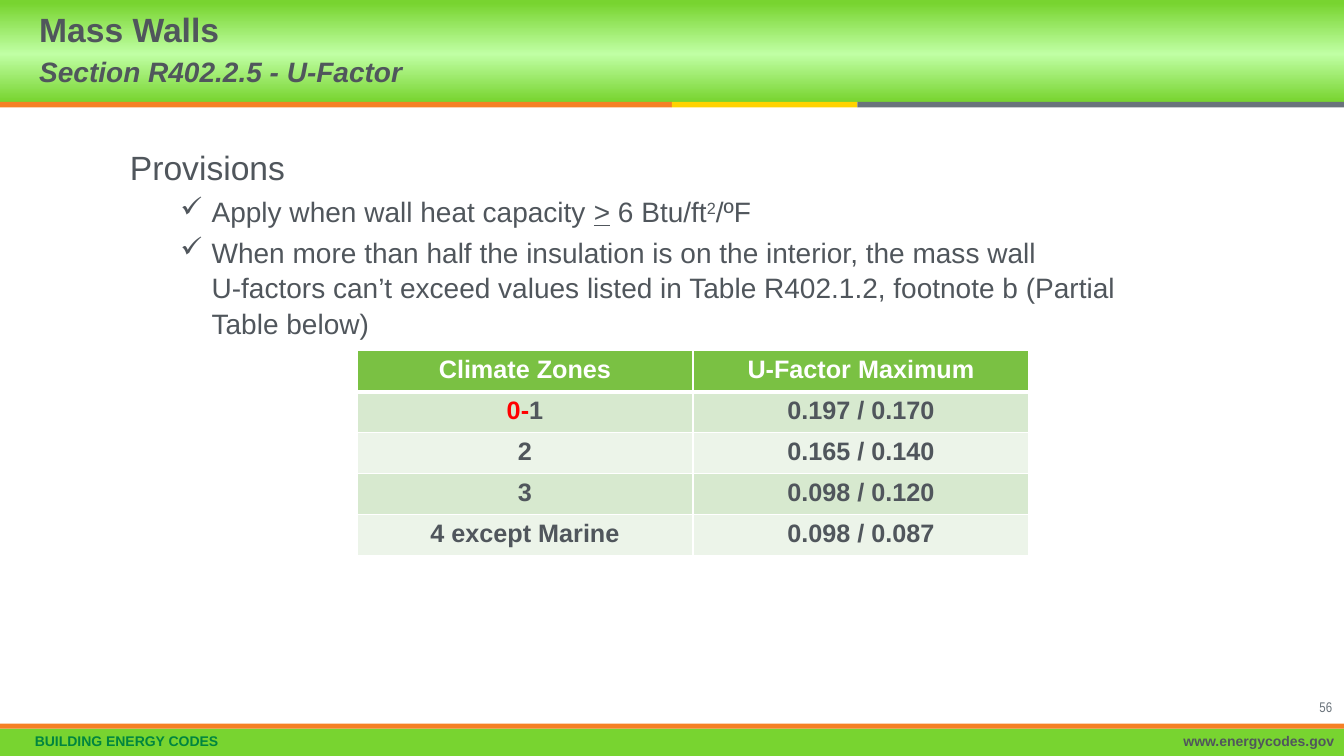
from lxml.etree import SubElement
from copy import deepcopy
from pptx import Presentation
from pptx.dml.color import RGBColor
from pptx.enum.shapes import MSO_SHAPE
from pptx.enum.text import MSO_ANCHOR, PP_ALIGN
from pptx.oxml.ns import qn
from pptx.util import Inches, Pt

WIDTH, HEIGHT = Inches(13.33), Inches(7.5)
GREEN = RGBColor(0x78, 0xD4, 0x30)
PALE_GREEN = RGBColor(0xC0, 0xFF, 0xA4)
DARK_GREEN = RGBColor(0x00, 0x85, 0x3F)
ORANGE = RGBColor(0xF5, 0x80, 0x25)
YELLOW = RGBColor(0xFF, 0xD2, 0x00)
GRAY = RGBColor(0x6A, 0x73, 0x7B)
TEXT = RGBColor(0x50, 0x56, 0x5C)
RED = RGBColor(0xFF, 0x00, 0x00)
WHITE = RGBColor(0xFF, 0xFF, 0xFF)
HEADER_FILL = RGBColor(0x7A, 0xC1, 0x43)
BAND_FILLS = [RGBColor(0xEC, 0xF4, 0xE9), RGBColor(0xD7, 0xE9, 0xCF)]

# Left, width and colour of the stripe under the title, in percent of the slide
STRIPE = [(0, 50, ORANGE), (50, 13.8, YELLOW), (63.8, 36.2, GRAY)]
ROWS = [
    ("Climate Zones", "U-Factor Maximum"),
    ("0-1", "0.197 / 0.170"),
    ("2", "0.165 / 0.140"),
    ("3", "0.098 / 0.120"),
    ("4 except Marine", "0.098 / 0.087"),
]


def place(left, top, width, height):
    """Turn percentages of the slide's size into lengths."""
    return [int(share * size / 100) for share, size in
            zip((left, top, width, height), (WIDTH, HEIGHT, WIDTH, HEIGHT))]


def add_bar(page, area, color):
    bar = page.shapes.add_shape(MSO_SHAPE.RECTANGLE, *place(*area))
    bar.shadow.inherit = False
    bar.line.fill.background()
    bar.fill.solid()
    bar.fill.fore_color.rgb = color
    return bar


def add_title_band(page):
    fill = add_bar(page, (0, 0, 100, 13.47), GREEN).fill
    fill.gradient()
    fill.gradient_angle = 90
    first_stop = fill.gradient_stops[0]._gs
    first_stop.addnext(deepcopy(first_stop))
    for stop, position, color in zip(fill.gradient_stops, (0, 0.47, 0.97),
                                     (GREEN, PALE_GREEN, GREEN)):
        stop.position = position
        stop.color.rgb = color


def add_text_frame(page, area):
    frame = page.shapes.add_textbox(*place(*area)).text_frame
    frame.word_wrap = True
    return frame


def style(font, size, color=TEXT, bold=False, name="Arial"):
    font.name, font.size, font.bold = name, Pt(size), bold
    font.color.rgb = color


def add_label(page, area, text, align=PP_ALIGN.LEFT, **look):
    frame = add_text_frame(page, area)
    para = frame.paragraphs[0]
    para.text, para.alignment = text, align
    para.line_spacing = 0.9
    style(para.font, 10, **look)


def add_title(page):
    frame = add_text_frame(page, (2.18, 0, 53.34, 13.07))
    frame.vertical_anchor = MSO_ANCHOR.MIDDLE
    para = frame.paragraphs[0]
    para.line_spacing = Pt(28)
    heading = para.add_run()
    heading.text = "Mass Walls"
    style(heading.font, 24, bold=True)
    para.add_line_break()
    section = para.add_run()
    section.text = "Section R402.2.5 - U-Factor"
    style(section.font, 20, bold=True)
    section.font.italic = True


def add_check_item(frame, *texts):
    """Add a check-marked paragraph and return its runs."""
    para = frame.add_paragraph()
    para.space_before = Pt(4)
    para.line_spacing = 1.05
    properties = para._p.get_or_add_pPr()
    properties.set("marL", str(Inches(0.81)))
    properties.set("indent", str(-Inches(0.31)))
    SubElement(properties, qn("a:buChar")).set("char", "✓")
    style(para.font, 20)
    spans = []
    for text in texts:
        span = para.add_run()
        span.text = text
        style(span.font, 20)
        spans.append(span)
    return spans


def add_provisions(page):
    frame = add_text_frame(page, (8.93, 18.53, 77.42, 24.67))
    para = frame.paragraphs[0]
    para.text = "Provisions"
    para.line_spacing = 1.05
    style(para.font, 24)
    spans = add_check_item(frame, "Apply when wall heat capacity ", ">",
                           " 6 Btu/ft", "2", "/ºF")
    spans[1].font.underline = True
    spans[3]._r.get_or_add_rPr().set("baseline", "30000")
    lines = add_check_item(
        frame, "When more than half the insulation is on the interior, the mass wall ",
        "U-factors can’t exceed values listed in Table R402.1.2, "
        "footnote b (Partial Table below)")
    lines[0]._r.addnext(lines[0]._r.makeelement(qn("a:br")))


def set_borders(cell, bottom_width):
    properties = cell._tc.get_or_add_tcPr()
    widths = {"a:lnL": 1, "a:lnR": 1, "a:lnT": 1, "a:lnB": bottom_width}
    for index, (tag, width) in enumerate(widths.items()):
        line = properties.makeelement(qn(tag), {"w": str(Pt(width))})
        fill = SubElement(line, qn("a:solidFill"))
        SubElement(fill, qn("a:srgbClr")).set("val", str(WHITE))
        properties.insert(index, line)


def add_factor_table(page):
    table = page.shapes.add_table(len(ROWS), 2, *place(26.56, 46.4, 50, 27.1)).table
    table.horz_banding = False
    for row, texts in enumerate(ROWS):
        for column, text in enumerate(texts):
            cell = table.cell(row, column)
            cell.fill.solid()
            cell.fill.fore_color.rgb = BAND_FILLS[row % 2] if row else HEADER_FILL
            set_borders(cell, 1 if row else 3)
            para = cell.text_frame.paragraphs[0]
            para.alignment = PP_ALIGN.CENTER
            color = TEXT if row else WHITE
            if text == "0-1":
                parts = [("0-", RED), ("1", TEXT)]
            else:
                parts = [(text, color)]
            for part, part_color in parts:
                span = para.add_run()
                span.text = part
                style(span.font, 18, part_color, bold=True)


def main():
    deck = Presentation()
    deck.slide_width, deck.slide_height = WIDTH, HEIGHT
    page = deck.slides.add_slide(deck.slide_layouts[6])
    add_title_band(page)
    for left, width, color in STRIPE:
        add_bar(page, (left, 13.47, width, 0.75), color)
    add_bar(page, (0, 96.4, 100, 3.6), GREEN)
    add_bar(page, (0, 95.73, 100, 0.67), ORANGE)
    add_label(page, (1.85, 96.53, 78.5, 3.47), "BUILDING ENERGY CODES",
              color=DARK_GREEN, bold=True)
    add_label(page, (59.9, 96.53, 40.1, 3.47), "www.energycodes.gov",
              PP_ALIGN.RIGHT, bold=True)
    add_label(page, (92.8, 92, 7.05, 2.4), "56", PP_ALIGN.RIGHT,
              color=GRAY, name="Arial Narrow")
    add_title(page)
    add_provisions(page)
    add_factor_table(page)
    deck.save("out.pptx")


if __name__ == "__main__":
    main()
